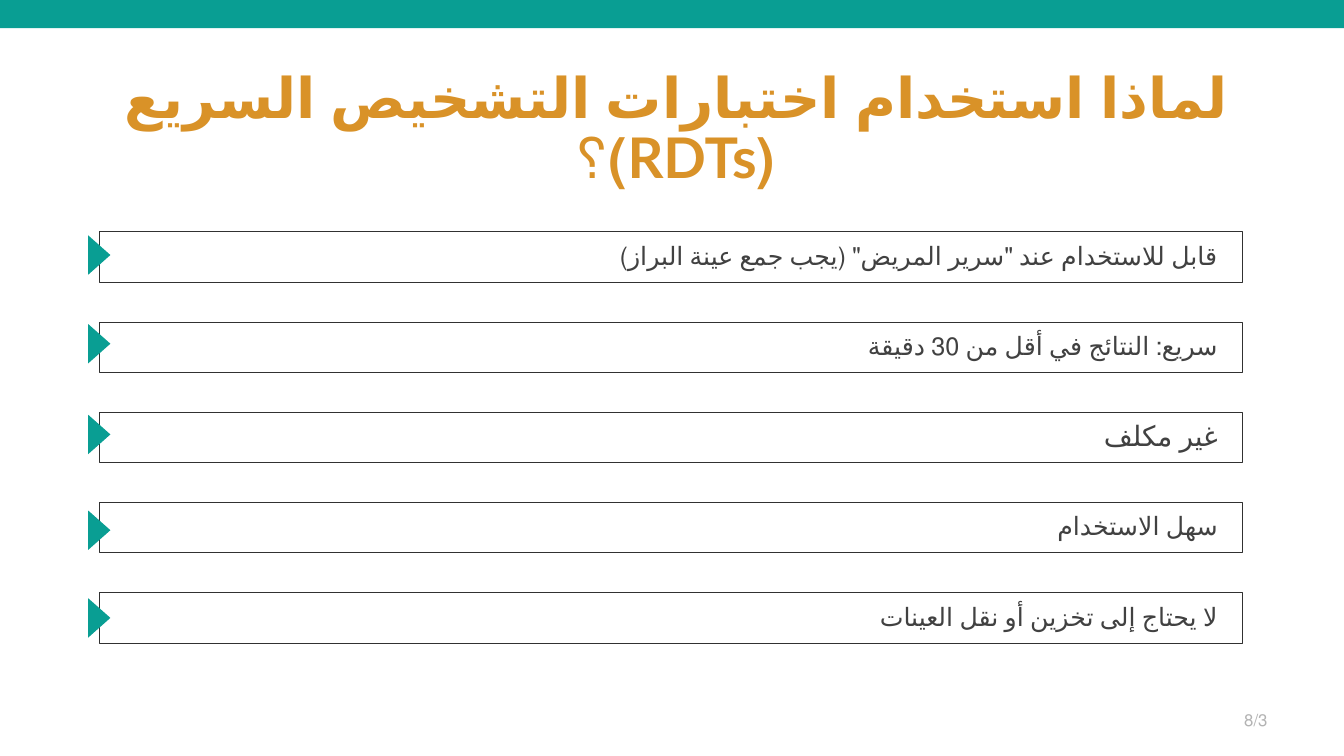
import pptx
import pptx.util
import pptx.dml.color
import pptx.enum.lang
import pptx.enum.shapes
import pptx.enum.text

Inches = pptx.util.Inches
Pt = pptx.util.Pt
SHAPES = pptx.enum.shapes.MSO_SHAPE
ALIGN = pptx.enum.text.PP_ALIGN
ARABIC = pptx.enum.lang.MSO_LANGUAGE_ID.ARABIC

# Content
TITLE = "لماذا استخدام اختبارات التشخيص السريع (RDTs)؟"
PAGE = "8/3"
# Text, font size, top of the marker
REASONS = [
    ('قابل للاستخدام عند "سرير المريض" (يجب جمع عينة البراز)', 18, 2.42),
    ("سريع: النتائج في أقل من 30 دقيقة", 18, 3.3),
    ("غير مكلف", 20, 4.2),
    ("سهل الاستخدام", 18, 5.15),
    ("لا يحتاج إلى تخزين أو نقل العينات", 18, 6.02),
]

# Style
FONT = "Lato"
TEAL, ORANGE, INK, OUTLINE, GREY = "099E93", "D99228", "414141", "313131", "B3B3B3"
FIRST_TOP, STEP = 2.3, 0.895


def color(value):
    return pptx.dml.color.RGBColor.from_string(value)


def add_shape(kind, box, fill=None, line=None):
    shape = slide.shapes.add_shape(kind, *map(Inches, box))
    shape.shadow.inherit = False
    if fill:
        shape.fill.solid()
        shape.fill.fore_color.rgb = color(fill)
    else:
        shape.fill.background()
    if line:
        shape.line.color.rgb = color(line)
        shape.line.width = Pt(0.5)
    else:
        shape.line.fill.background()
    return shape


def write(shape, text, size, ink, align=ALIGN.RIGHT, bold=False, before=0, insets=(0.1, 0.05)):
    frame = shape.text_frame
    frame.word_wrap = True
    frame.vertical_anchor = pptx.enum.text.MSO_ANCHOR.MIDDLE
    frame.margin_left = frame.margin_right = Inches(insets[0])
    frame.margin_top = frame.margin_bottom = Inches(insets[1])
    paragraph = frame.paragraphs[0]
    paragraph.text = text
    paragraph.alignment = align
    paragraph.line_spacing = 0.9
    paragraph.space_before = Pt(before)
    paragraph.font.name = FONT
    paragraph.font.size = Pt(size)
    paragraph.font.bold = bold
    paragraph.font.color.rgb = color(ink)
    # Arabic language and right-to-left reading order
    paragraph.runs[0].font.language_id = ARABIC
    paragraph._p.get_or_add_pPr().set("rtl", "1")


presentation = pptx.Presentation()
presentation.slide_width = Inches(13.33)
presentation.slide_height = Inches(7.5)
slide = presentation.slides.add_slide(presentation.slide_layouts[6])

# Top band and title
add_shape(SHAPES.RECTANGLE, (-0.08, -0.09, 13.5, 0.37), fill=TEAL)
title = slide.shapes.add_textbox(*map(Inches, (0.96, 0.57, 11.5, 1.45)))
write(title, TITLE, 40, ORANGE, align=ALIGN.CENTER, bold=True)

# Framed reasons, each with a marker on its left edge
for index, (text, size, marker_top) in enumerate(REASONS):
    top = FIRST_TOP + index * STEP
    frame = add_shape(SHAPES.RECTANGLE, (0.99, top, 11.33, 0.5), line=OUTLINE)
    write(frame, text, size, INK, before=10, insets=(0.24, 0.24))
    marker = add_shape(SHAPES.ISOSCELES_TRIANGLE, (0.79, marker_top, 0.39, 0.22), fill=TEAL)
    marker.rotation = 90

# Page number
page = slide.shapes.add_textbox(*map(Inches, (9.67, 6.95, 3, 0.4)))
write(page, PAGE, 12, GREY)

presentation.save("out.pptx")
